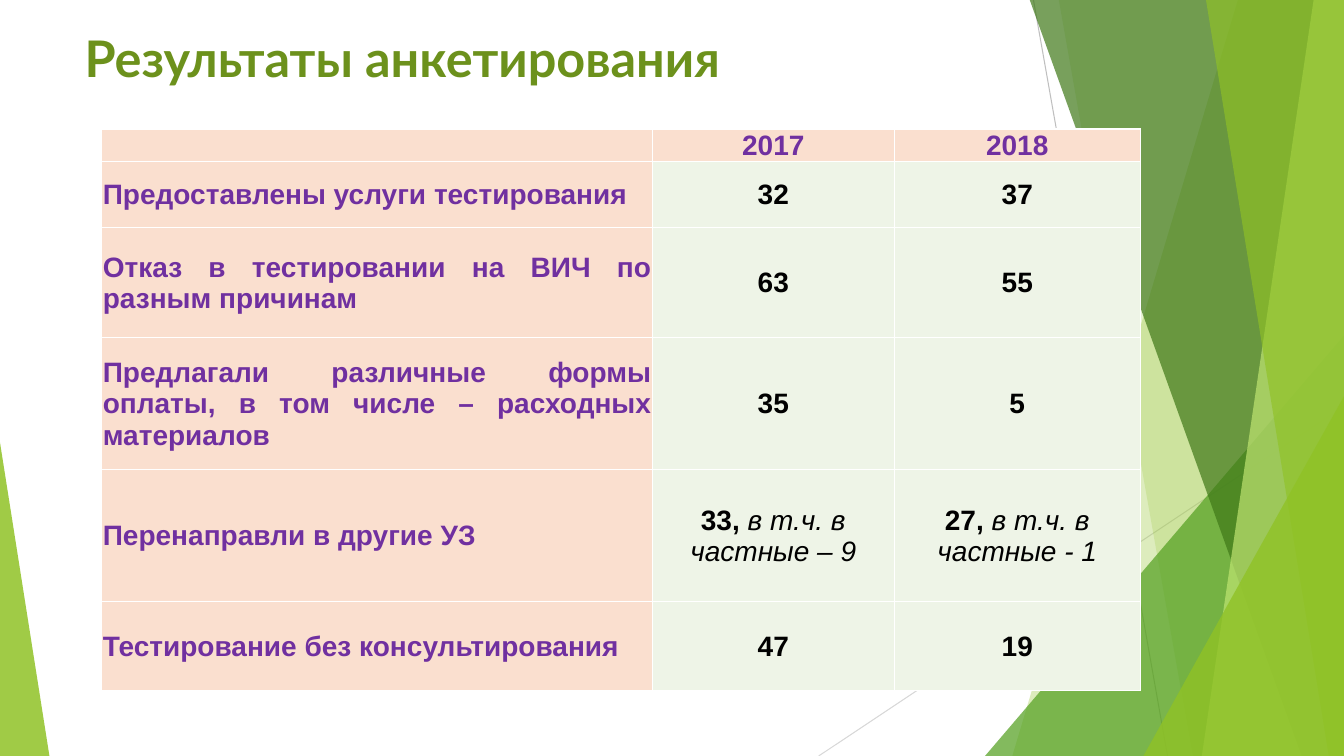
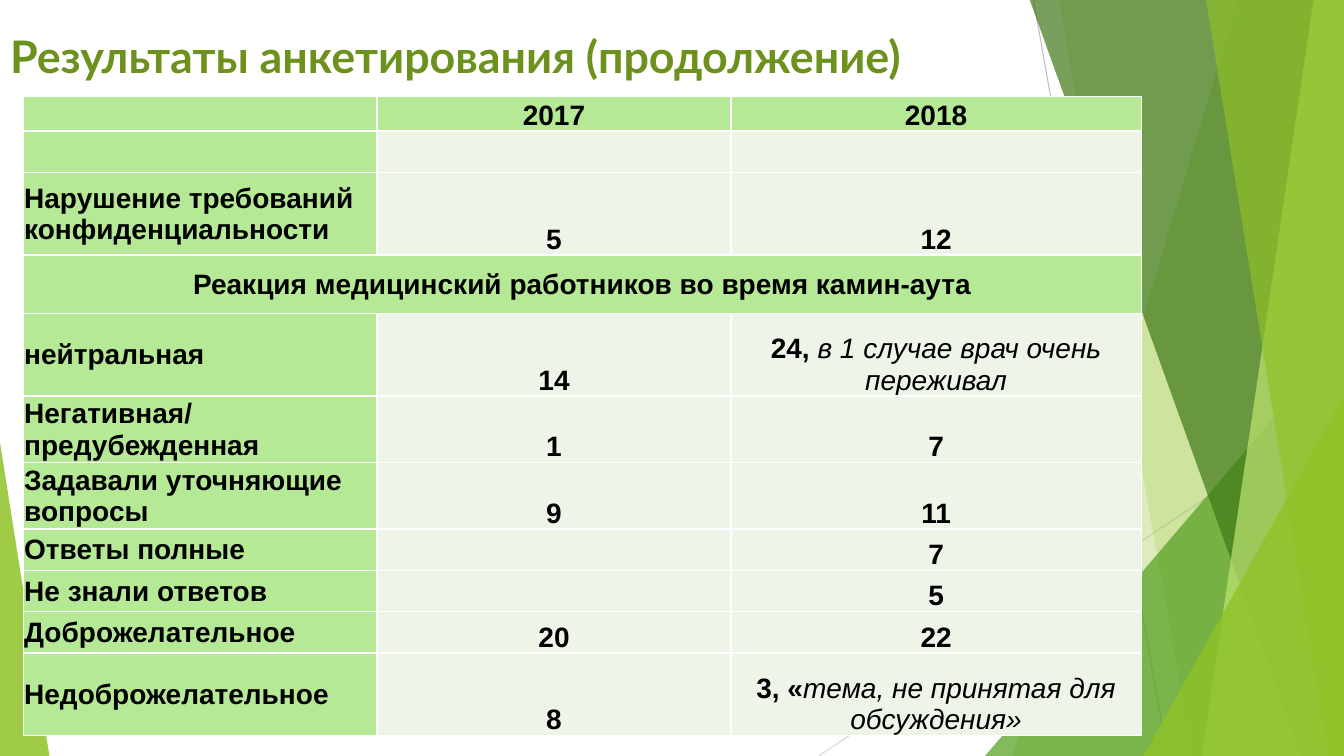
from dataclasses import dataclass

from lxml.etree import SubElement
from pptx import Presentation
from pptx.dml.color import RGBColor
from pptx.enum.shapes import MSO_CONNECTOR as Connector, MSO_SHAPE as Preset
from pptx.enum.text import MSO_ANCHOR as Anchor, MSO_AUTO_SIZE as AutoSize, PP_ALIGN as Align
from pptx.oxml.ns import qn
from pptx.util import Inches, Pt


@dataclass(frozen=True)
class Theme:
    title_font: str = "Lato"
    table_font: str = "Arial"
    table_size: int = 20
    title: str = "6C911C"
    black: str = "000000"
    white: str = "FFFFFF"
    purple: str = "7030A0"
    peach: str = "FADFCF"
    mint: str = "B6E995"
    pale: str = "EEF4E7"
    lime: str = "90C226"
    light_lime: str = "BFE471"
    green: str = "54A021"
    dark_green: str = "3F7818"
    grey: str = "BFBFBF"
    light_grey: str = "D8D8D8"


theme = Theme()


def paint(shape, color, opacity):
    shape.shadow.inherit = False
    shape.fill.solid()
    shape.fill.fore_color.rgb = RGBColor.from_string(color)
    shape.line.fill.background()
    tint = shape.element.spPr.find(".//" + qn("a:srgbClr"))
    SubElement(tint, qn("a:alpha"), val=str(opacity * 1000))


def format_cell(cell, text, fill, color, align, anchor):
    cell.margin_left = cell.margin_right = cell.margin_top = Inches(0.01)
    cell.margin_bottom = 0
    cell.vertical_anchor = anchor
    para = cell.text_frame.paragraphs[0]
    para.alignment = align
    para.font.name = theme.table_font
    para.font.size = Pt(theme.table_size)
    para.font.color.rgb = RGBColor.from_string(color)
    number, _, remark = text.partition("|")
    for words, is_remark in ((number, False), (remark, True)):
        if words:
            span = para.add_run()
            span.text = words
            span.font.bold = not is_remark
            span.font.italic = is_remark
    properties = cell._tc.get_or_add_tcPr()
    for side in ("a:lnL", "a:lnR", "a:lnT", "a:lnB"):
        border = SubElement(properties, qn(side), w=str(Pt(1)))
        SubElement(SubElement(border, qn("a:solidFill")), qn("a:srgbClr"), val=theme.white)
    cell.fill.solid()
    cell.fill.fore_color.rgb = RGBColor.from_string(fill)


surveys = [
    {
        "title": "Результаты анкетирования",
        "title_box": (0.74, 0.22, 9.4, 0.86),
        "title_size": 36,
        "corner": (1.01, 1.28),
        "columns": (5.46, 2.4, 2.44),
        "head_fill": theme.peach,
        "head_color": theme.purple,
        "label_align": Align.JUSTIFY,
        "value_anchor": Anchor.MIDDLE,
        "rows": [
            (0.32, "", "2017", "2018"),
            (0.66, "Предоставлены услуги тестирования", "32", "37"),
            (1.09, "Отказ в тестировании на ВИЧ по разным причинам", "63", "55"),
            (1.31, "Предлагали различные формы оплаты, в том числе – расходных материалов", "35", "5"),
            (1.31, "Перенаправли в другие УЗ", "33, |в т.ч. в частные – 9", "27, |в т.ч. в частные - 1"),
            (0.88, "Тестирование без консультирования", "47", "19"),
        ],
    },
    {
        "title": "Результаты анкетирования (продолжение)",
        "title_box": (0, 0.23, 10.04, 0.73),
        "title_size": 32,
        "corner": (0.23, 0.96),
        "columns": (3.51, 3.51, 4.07),
        "head_fill": theme.mint,
        "head_color": theme.black,
        "label_align": Align.LEFT,
        "value_anchor": Anchor.BOTTOM,
        "rows": [
            (0.34, "", "2017", "2018"),
            (0.41, "", "", ""),
            (0.82, "Нарушение требований конфиденциальности", "5", "12"),
            (0.58, "Реакция медицинский работников во время камин-аута"),
            (0.82, "нейтральная", "14", "24, |в 1 случае врач очень переживал"),
            (0.66, "Негативная/предубежденная", "1", "7"),
            (0.66, "Задавали уточняющие вопросы", "9", "11"),
            (0.41, "Ответы полные", "", "7"),
            (0.41, "Не знали ответов", "", "5"),
            (0.41, "Доброжелательное", "20", "22"),
            (0.82, "Недоброжелательное", "8", "3, «|тема, не принятая для обсуждения»"),
        ],
    },
]

deck = Presentation()
deck.slide_width = Inches(13.33)
deck.slide_height = Inches(7.5)
layout = deck.slide_layouts[5]
for holder in list(layout.placeholders):
    if holder.placeholder_format.idx != 0:
        holder.element.getparent().remove(holder.element)

for survey in surveys:
    page = deck.slides.add_slide(layout)
    title = page.shapes.title
    title.left, title.top, title.width, title.height = map(Inches, survey["title_box"])
    frame = title.text_frame
    frame.text = survey["title"]
    frame.word_wrap = True
    frame.auto_size = AutoSize.NONE
    frame.vertical_anchor = Anchor.TOP
    para = frame.paragraphs[0]
    para.alignment = Align.LEFT
    para.font.name = theme.title_font
    para.font.size = Pt(survey["title_size"])
    para.font.bold = True
    para.font.color.rgb = RGBColor.from_string(theme.title)

    rows, columns = survey["rows"], survey["columns"]
    left, top = survey["corner"]
    height = sum(row[0] for row in rows)
    table = page.shapes.add_table(
        len(rows), len(columns), Inches(left), Inches(top), Inches(sum(columns)), Inches(height)
    ).table
    for column, width in zip(table.columns, columns):
        column.width = Inches(width)
    for row_index, (row_height, *texts) in enumerate(rows):
        table.rows[row_index].height = Inches(row_height)
        is_section = len(texts) == 1
        if is_section:
            table.cell(row_index, 0).merge(table.cell(row_index, len(columns) - 1))
        for column_index, text in enumerate(texts):
            is_label = column_index == 0
            is_head = is_label or row_index == 0
            format_cell(
                table.cell(row_index, column_index),
                text,
                survey["head_fill"] if is_head else theme.pale,
                survey["head_color"] if is_head else theme.black,
                survey["label_align"] if is_label and not is_section else Align.CENTER,
                Anchor.MIDDLE if is_label else survey["value_anchor"],
            )

backdrop = deck.slides[0].shapes.add_group_shape()

for start_x, start_y, end_x, color in (
    (10.25, 0, 11.58, theme.grey),
    (13.33, 4.03, 8.12, theme.light_grey),
):
    ray = backdrop.shapes.add_connector(
        Connector.STRAIGHT, Inches(start_x), Inches(start_y), Inches(end_x), Inches(7.5)
    )
    ray.line.color.rgb = RGBColor.from_string(color)
    ray.line.width = Pt(0.75)
    SubElement(ray.element.spPr, qn("a:effectLst"))

facets = [
    ("band", 12.28, 10.04, theme.lime, 30),
    ("band", 10.5, 11.83, theme.lime, 20),
    ("triangle", (9.77, 3.33, 3.56, 4.17), 1, theme.green, 72),
    ("band", 10.21, 12.91, theme.dark_green, 70),
    ("band", 13.03, 11.92, theme.light_lime, 70),
    ("band", 11.96, 13.18, theme.lime, 65),
    ("triangle", (11.34, 3.93, 1.99, 3.57), 1, theme.lime, 80),
    ("triangle", (0, 4.39, 0.49, 3.11), 0, theme.lime, 85),
]
for kind, first, second, color, opacity in facets:
    if kind == "band":
        corners = [(13.33, -0.01), (13.33, 7.5), (second, 7.5)]
        outline = backdrop.shapes.build_freeform(Inches(first), Inches(-0.01))
        outline.add_line_segments([(Inches(x), Inches(y)) for x, y in corners], close=True)
        facet = outline.convert_to_shape()
    else:
        facet = backdrop.shapes.add_shape(Preset.ISOSCELES_TRIANGLE, *map(Inches, first))
        facet.adjustments[0] = second
    paint(facet, color, opacity)

layout.shapes.element.append(backdrop.element)

deck.save("out.pptx")
